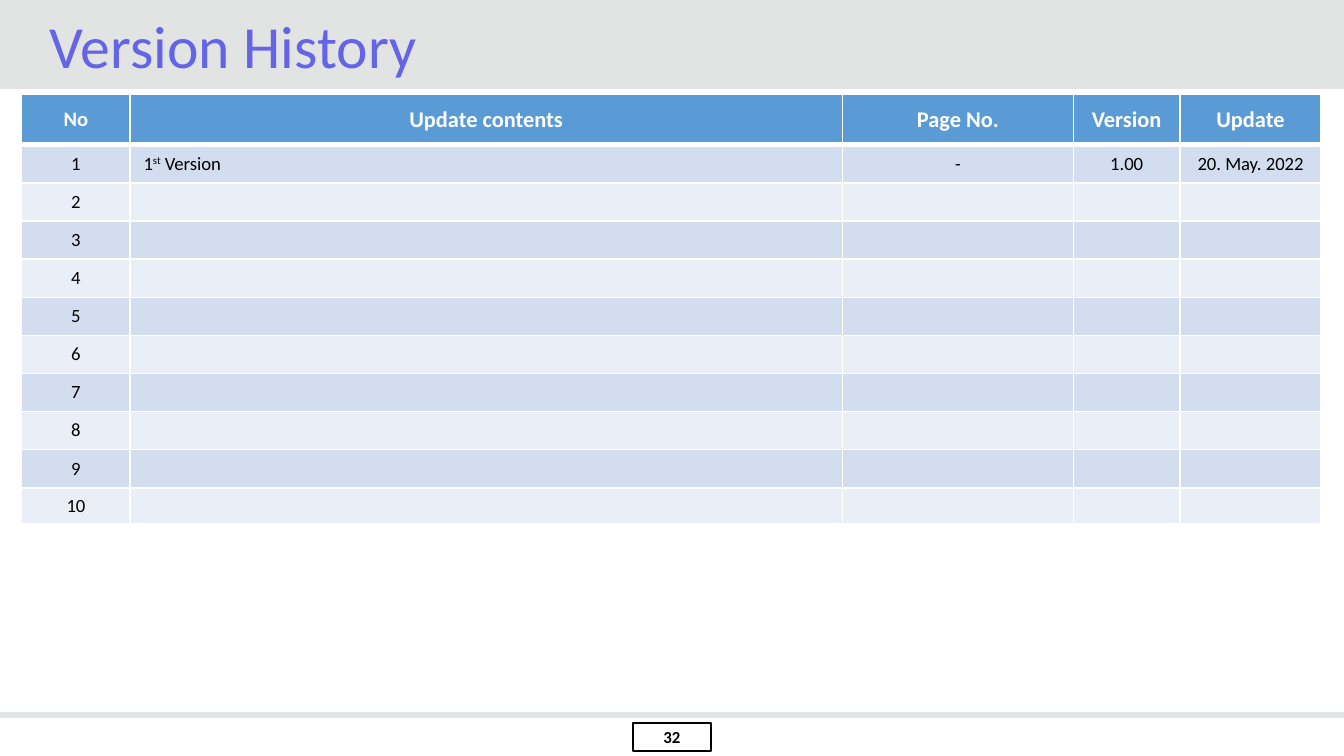
from lxml import etree
from pptx import Presentation
from pptx.dml.color import RGBColor
from pptx.enum.shapes import MSO_CONNECTOR, MSO_SHAPE
from pptx.enum.text import MSO_ANCHOR, PP_ALIGN
from pptx.oxml.ns import qn
from pptx.util import Cm, Pt

LEFT, MID = PP_ALIGN.LEFT, PP_ALIGN.CENTER
CENTER = MSO_ANCHOR.MIDDLE
RECT, LINE = MSO_SHAPE.RECTANGLE, MSO_CONNECTOR.STRAIGHT

FACE = "Calibri"
GREY, WHITE, BLACK, VIOLET = "E2E3E3", "FFFFFF", "000000", "6464E6"
HEAD, BANDS = "5B9BD5", ("D2DEEF", "EAEFF7")
WIDE, HIGH = 25.4, 14.29

COLS = [2.05, 13.46, 4.37, 2.01, 2.67]
ROWS = [0.96] + [0.72] * 9 + [0.66]
HEADS = ["No", "Update contents", "Page No.", "Version", "Update"]
FIRST = ["1", ["1", "st", " Version"], "-", "1.00", "20. May. 2022"]
DATA = [HEADS, FIRST] + [[str(n), "", "", "", ""] for n in range(2, 11)]


def color(code):
    return RGBColor.from_string(code)


def paint(fill, code):
    fill.solid()
    fill.fore_color.rgb = color(code)


def style(item, values):
    for name, value in values.items():
        setattr(item, name, value)


def write(para, text, size, code, bold=False):
    run = para.add_run()
    run.text = text
    style(run.font, {"name": FACE, "size": Pt(size), "bold": bold})
    run.font.color.rgb = color(code)
    return run


def add_title(slide, box):
    title = slide.shapes.title
    # Banner goes behind the title
    bar = slide.shapes.add_shape(RECT, 0, 0, Cm(WIDE), Cm(1.68))
    bar.shadow.inherit = False
    paint(bar.fill, GREY)
    bar.line.fill.background()
    title._element.addprevious(bar._element)

    left, top, width, height = map(Cm, box)
    style(title, {"left": left, "top": top, "width": width, "height": height})
    style(title.text_frame, {
        "vertical_anchor": CENTER, "word_wrap": True,
        "margin_left": Cm(0.25), "margin_right": Cm(0.25),
        "margin_top": Cm(0.13), "margin_bottom": 0})
    para = title.text_frame.paragraphs[0]
    style(para, {"alignment": LEFT, "line_spacing": 0.9})
    write(para, "Version History", 32, VIOLET)


def add_edges(cell, top, base):
    props = cell._tc.get_or_add_tcPr()
    sides = {"a:lnL": 1, "a:lnR": 1, "a:lnT": top, "a:lnB": base}
    for spot, (tag, width) in enumerate(sides.items()):
        edge = etree.Element(qn(tag), w=str(Pt(width)))
        fill = etree.SubElement(edge, qn("a:solidFill"))
        etree.SubElement(fill, qn("a:srgbClr"), val=WHITE)
        props.insert(spot, edge)


def fill_cell(cell, value, row, col):
    head = row == 0
    cell.vertical_anchor = CENTER
    paint(cell.fill, HEAD if head else BANDS[(row - 1) % 2])
    add_edges(cell, 3 if row == 1 else 1, 3 if head else 1)
    para = cell.text_frame.paragraphs[0]
    para.alignment = MID if head or col != 1 else LEFT
    size = (11 if col == 0 else 12) if head else 10
    if not value:
        # Keeps a blank cell from stretching its row
        end = etree.SubElement(para._p, qn("a:endParaRPr"))
        end.set("sz", str(size * 100))
        return
    parts = value if isinstance(value, list) else [value]
    for spot, text in enumerate(parts):
        run = write(para, text, size, WHITE if head else BLACK, head)
        if spot == 1:
            run.font._element.set("baseline", "30000")


def add_log(slide, left, top):
    frame = slide.shapes.add_table(
        len(ROWS), len(COLS), Cm(left), Cm(top), Cm(sum(COLS)), Cm(sum(ROWS)))
    table = frame.table
    table.horz_banding = False
    for col, width in zip(table.columns, COLS):
        col.width = Cm(width)
    for row, height in zip(table.rows, ROWS):
        row.height = Cm(height)
    for row, values in enumerate(DATA):
        for col, value in enumerate(values):
            fill_cell(table.cell(row, col), value, row, col)


def add_foot(slide, top):
    # Rule across the slide
    rule = slide.shapes.add_connector(LINE, 0, Cm(top), Cm(WIDE), Cm(top))
    rule.line.color.rgb = color(GREY)
    rule.line.width = Pt(3)
    etree.SubElement(rule._element.spPr, qn("a:effectLst"))

    # Page number, centred below the rule
    width = 1.48
    page = slide.shapes.add_shape(
        RECT, Cm((WIDE - width) / 2), Cm(top + 0.15), Cm(width), Cm(0.53))
    page.shadow.inherit = False
    page.fill.background()
    page.line.color.rgb = color(BLACK)
    page.line.width = Pt(1)
    frame = page.text_frame
    frame.vertical_anchor = CENTER
    sides = ("left", "right", "top", "bottom")
    style(frame, {f"margin_{side}": Cm(0.08) for side in sides})
    para = frame.paragraphs[0]
    para.alignment = MID
    write(para, "32", 9, BLACK, True)


def main():
    deck = Presentation()
    style(deck, {"slide_width": Cm(WIDE), "slide_height": Cm(HIGH)})
    slide = deck.slides.add_slide(deck.slide_layouts[5])
    add_title(slide, (0.69, 0.03, 24.03, 1.68))
    add_log(slide, 0.41, 1.78)
    add_foot(slide, 13.51)
    deck.save("out.pptx")


if __name__ == "__main__":
    main()
